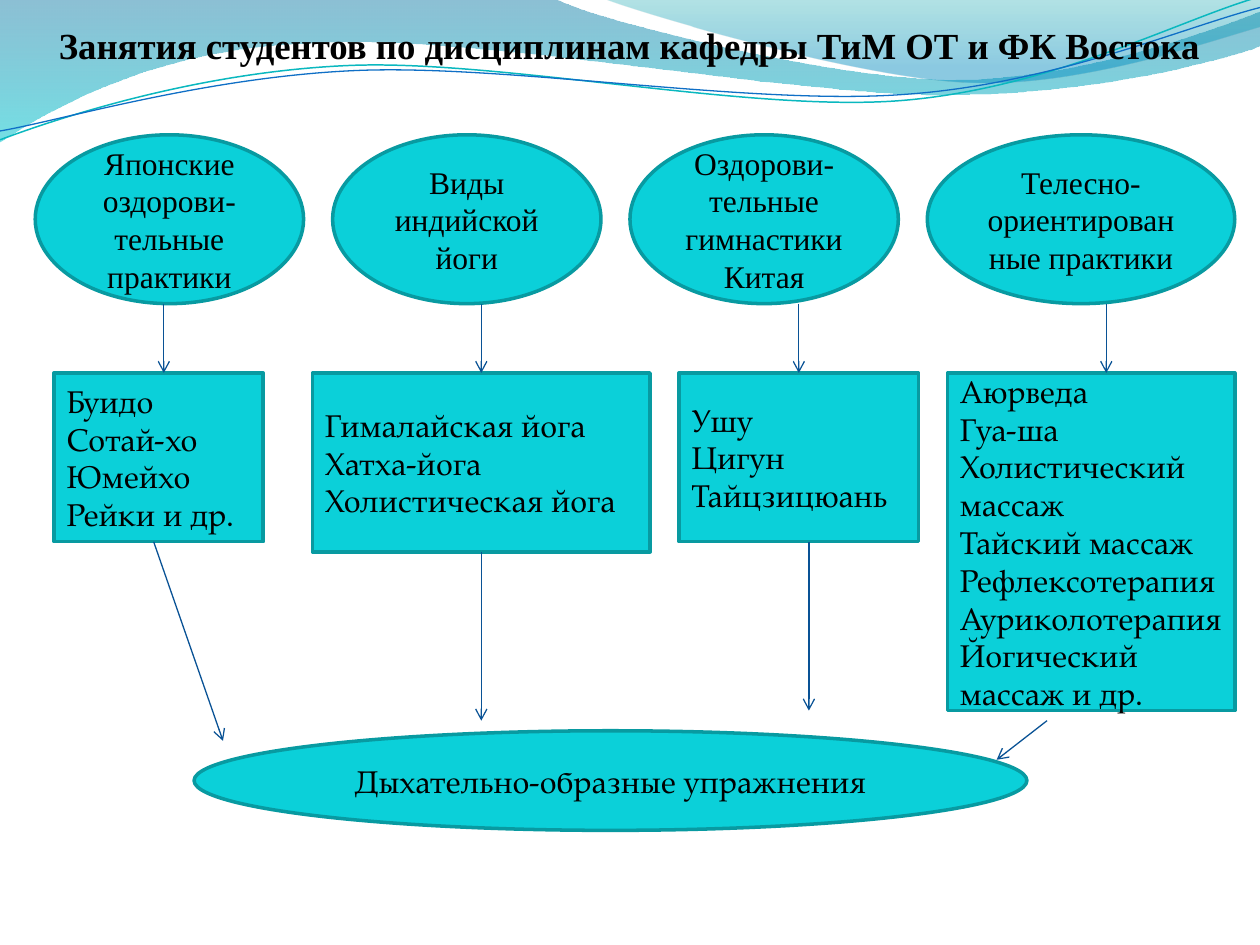
from math import cos, radians, sin

from lxml.etree import SubElement
from pptx import Presentation
from pptx.dml.color import RGBColor
from pptx.enum.shapes import MSO_CONNECTOR, MSO_SHAPE
from pptx.enum.text import MSO_ANCHOR, MSO_AUTO_SIZE, PP_ALIGN
from pptx.oxml import parse_xml
from pptx.oxml.ns import nsdecls, qn
from pptx.util import Inches, Pt

SERIF = "Times New Roman"
BODY = "TeX Gyre Pagella"
FILL, BORDER, ARROW = "0BD0D9", "089AA1", "095295"
ROW_TOP, ROW_HEIGHT = 1.07, 1.34
ROW_BOTTOM = ROW_TOP + ROW_HEIGHT
BOX_TOP = 2.96
WAVE_TILT = 2.7

# Outlines: each step lists its points, one for a line, three for a Bezier curve
LEFT_WAVE = [
    [(0, 0)], [(4.4, -0.01)], [(4.76, 0.17), (6.64, 0.63), (7.58, 0.63)],
    [(8.53, 0.63), (9.58, 0.26), (10, 0.09)], [(10.01, 0.36)],
    [(9.83, 0.44), (8.7, 0.76), (7.46, 0.75)],
    [(6.22, 0.75), (3.82, 0.28), (2.57, 0.34)],
    [(1.29, 0.36), (0.46, 0.83), (-0.01, 1.13)],
]
RIGHT_WAVE = [
    [(4.79, -0.01)], [(5.09, 0.11), (6.82, 0.62), (7.69, 0.65)],
    [(8.56, 0.69), (9.61, 0.32), (10, 0.21)], [(10, 0)],
]
TEAL_LINE = [
    [(0, 1.11)], [(0.48, 0.93), (1.58, 0.57), (2.77, 0.52)],
    [(3.95, 0.47), (5.93, 0.89), (7.13, 0.8)],
    [(8.33, 0.71), (9.38, 0.15), (9.98, -0.02)],
]
BLUE_LINE = [
    [(0, 1.04)], [(0.47, 0.96), (1.64, 0.61), (2.83, 0.56)],
    [(4.03, 0.51), (5.97, 0.84), (7.17, 0.75)],
    [(8.36, 0.67), (9.41, 0.21), (10, 0.06)],
]


def color(value):
    return RGBColor.from_string(value)


def turn(outline, center, degrees):
    """Turn an outline clockwise around a center."""
    cosine, sine = cos(radians(degrees)), sin(radians(degrees))
    center_x, center_y = center
    return [[(center_x + cosine * (x - center_x) - sine * (y - center_y),
              center_y + sine * (x - center_x) + cosine * (y - center_y))
             for x, y in step] for step in outline]


def add_outline(slide, outline, close):
    """Build a freeform through the step ends, then bend its curved steps."""
    steps = [[(Inches(x), Inches(y)) for x, y in step] for step in outline]
    ends = [step[-1] for step in steps]
    builder = slide.shapes.build_freeform(*ends[0])
    builder.add_line_segments(ends[1:], close=close)
    shape = builder.convert_to_shape()
    shape.shadow.inherit = False
    segments = list(shape._element.iter(qn("a:lnTo")))
    for segment, step in zip(segments, steps[1:]):
        if len(step) == 3:
            segment.tag = qn("a:cubicBezTo")
            segment.clear()
            for x, y in step:
                SubElement(segment, qn("a:pt"), x=str(x - shape.left), y=str(y - shape.top))
    return shape


def add_wave(slide, outline, stops):
    """Filled wave with a see-through gradient from top to bottom."""
    shape = add_outline(slide, outline, True)
    shape.line.fill.background()
    stop_xml = "".join(
        f'<a:gs pos="{position * 1000}"><a:srgbClr val="{value}">'
        f'<a:alpha val="{opacity * 1000}"/></a:srgbClr></a:gs>'
        for position, value, opacity in stops)
    gradient = parse_xml(
        f'<a:gradFill {nsdecls("a")} rotWithShape="1"><a:gsLst>{stop_xml}</a:gsLst>'
        '<a:lin ang="5400000" scaled="0"/></a:gradFill>')
    shape._element.spPr.find(qn("a:custGeom")).addnext(gradient)


def add_wave_line(slide, outline, center, value, width):
    shape = add_outline(slide, turn(outline, center, WAVE_TILT), False)
    shape.rotation = 360 - WAVE_TILT
    shape.fill.background()
    shape.line.color.rgb = color(value)
    shape.line.width = Pt(width)


def write_text(shape, text, font=BODY, size=18, bold=False, align=PP_ALIGN.LEFT,
               anchor=MSO_ANCHOR.MIDDLE):
    frame = shape.text_frame
    frame.word_wrap = True
    frame.vertical_anchor = anchor
    frame.text = text
    for paragraph in frame.paragraphs:
        paragraph.alignment = align
        for run in paragraph.runs:
            run.font.name = font
            run.font.size = Pt(size)
            run.font.bold = bold
            run.font.color.rgb = color("000000")


def add_block(slide, kind, left, top, width, height, text, **text_format):
    shape = slide.shapes.add_shape(
        kind, Inches(left), Inches(top), Inches(width), Inches(height))
    shape.shadow.inherit = False
    shape.fill.solid()
    shape.fill.fore_color.rgb = color(FILL)
    shape.line.color.rgb = color(BORDER)
    shape.line.width = Pt(2)
    write_text(shape, text, **text_format)
    return shape


def add_arrow(slide, start, end):
    connector = slide.shapes.add_connector(
        MSO_CONNECTOR.STRAIGHT, *(Inches(value) for value in start + end))
    connector.line.color.rgb = color(ARROW)
    connector.line.width = Pt(0.75)
    SubElement(connector.line._get_or_add_ln(), qn("a:tailEnd"), type="arrow")
    SubElement(connector._element.spPr, qn("a:effectLst"))
    return connector


def add_background(slide):
    add_wave(slide, LEFT_WAVE, [(0, "0074A1", 45), (100, "00C6CF", 55)])
    add_wave(slide, RIGHT_WAVE, [(0, "00A1A9", 30), (80, "008BBF", 45)])
    add_wave_line(slide, TEAL_LINE, (4.99, 0.57), "0AB8BF", 0.85)
    add_wave_line(slide, BLUE_LINE, (5, 0.59), "0F6FC6", 0.75)


def add_title(slide, text):
    box = slide.shapes.add_textbox(
        Inches(0.35), Inches(0.13), Inches(9.29), Inches(0.45))
    write_text(box, text, font=SERIF, size=21, bold=True,
               align=PP_ALIGN.CENTER, anchor=MSO_ANCHOR.TOP)
    box.text_frame.auto_size = MSO_AUTO_SIZE.SHAPE_TO_FIT_TEXT


def main():
    presentation = Presentation()
    presentation.slide_width = Inches(10)
    presentation.slide_height = Inches(7.5)
    slide = presentation.slides.add_slide(presentation.slide_layouts[6])
    add_background(slide)
    add_title(slide, "Занятия студентов по дисциплинам кафедры ТиМ ОТ и ФК Востока")

    # Disciplines: evenly spaced ellipses
    disciplines = [
        ("Японские оздорови-тельные практики", 2.13),
        ("Виды индийской йоги", 2.13),
        ("Оздорови-тельные гимнастики Китая", 2.13),
        ("Телесно-\nориентированные практики", 2.44),
    ]
    for index, (text, width) in enumerate(disciplines):
        add_block(slide, MSO_SHAPE.OVAL, 0.28 + 2.36 * index, ROW_TOP, width,
                  ROW_HEIGHT, text, font=SERIF, align=PP_ALIGN.CENTER)

    # Practices: left, width, height, arrow x, lines of text
    practices = [
        (0.43, 1.66, 1.34, 1.3, "Буидо\nСотай-хо\nЮмейхо\nРейки и др."),
        (2.48, 2.68, 1.42, 3.82, "Гималайская йога\nХатха-йога\nХолистическая йога"),
        (5.39, 1.9, 1.34, 6.34, "Ушу\nЦигун\nТайцзицюань"),
        (7.52, 2.28, 2.68, 8.78,
         "Аюрведа\nГуа-ша\nХолистический массаж\nТайский массаж\n"
         "Рефлексотерапия\nАуриколотерапия\nЙогический массаж и др."),
    ]
    boxes = []
    for left, width, height, x, text in practices:
        box = add_block(slide, MSO_SHAPE.RECTANGLE, left, BOX_TOP, width, height, text)
        arrow = add_arrow(slide, (x, ROW_BOTTOM), (x, BOX_TOP))
        if abs(left + width / 2 - x) < 0.01:
            arrow.end_connect(box, 0)
        boxes.append(box)

    # Shared result and the arrows leading to it
    add_block(slide, MSO_SHAPE.OVAL, 1.54, 5.8, 6.61, 0.79,
              "Дыхательно-образные упражнения", align=PP_ALIGN.CENTER)
    add_arrow(slide, (1.22, 4.3), (1.77, 5.88))
    add_arrow(slide, (3.82, 4.38), (3.82, 5.72)).begin_connect(boxes[1], 2)
    add_arrow(slide, (6.42, 4.3), (6.42, 5.64))
    add_arrow(slide, (8.31, 5.72), (7.91, 6.03))

    presentation.save("out.pptx")


if __name__ == "__main__":
    main()
